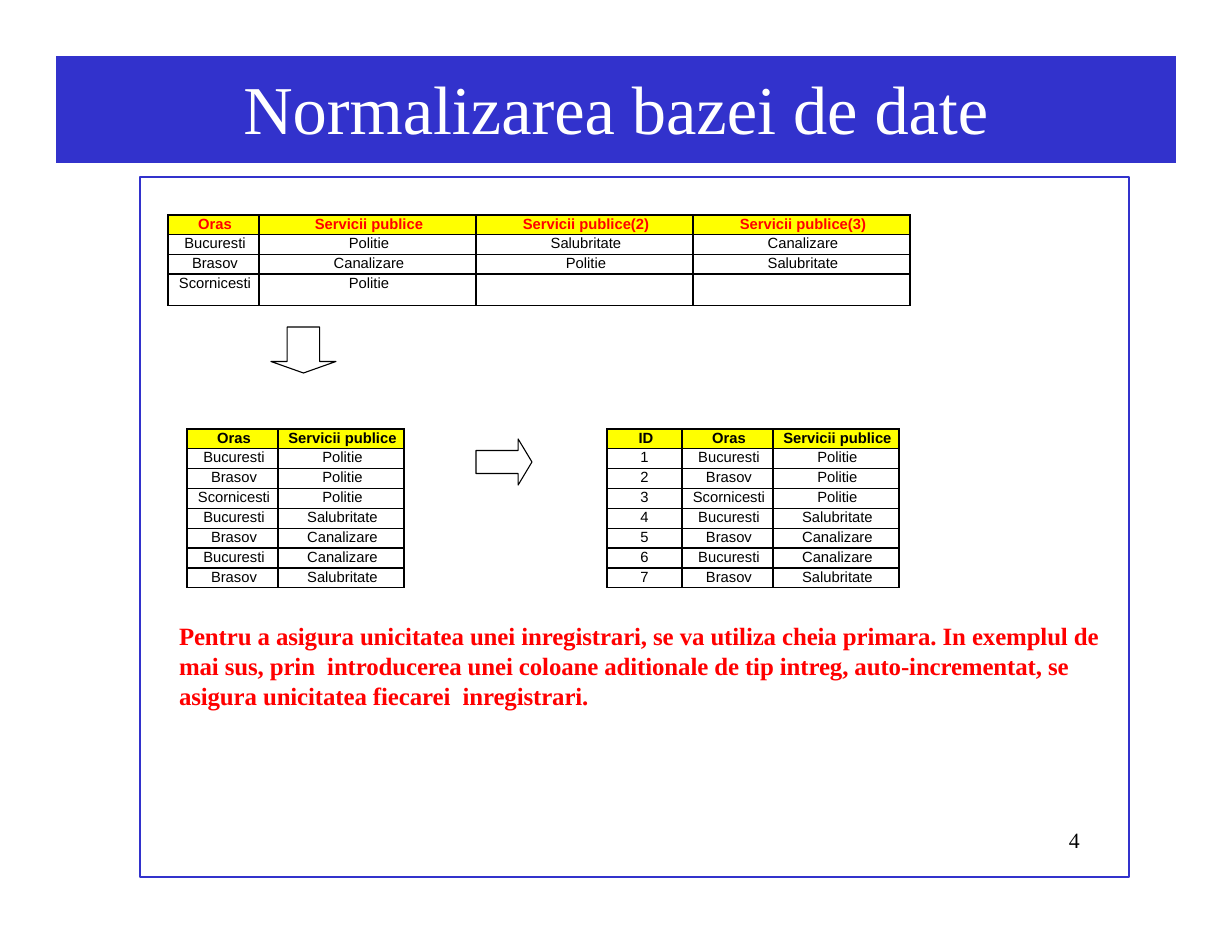
import pptx
import pptx.util
import pptx.dml.color
import pptx.enum.shapes
import pptx.enum.text
import lxml.etree

SCALE = 914400 / 112
SERIF = "Times New Roman"
BLUE, RED, YELLOW, BLACK, WHITE = "3232CC", "FF0000", "FFFF00", "000000", "FFFFFF"
CENTER = pptx.enum.text.PP_ALIGN.CENTER
SHAPE = pptx.enum.shapes.MSO_SHAPE

CITIES = [
    ["Oras", "Servicii publice", "Servicii publice(2)", "Servicii publice(3)"],
    ["Bucuresti", "Politie", "Salubritate", "Canalizare"],
    ["Brasov", "Canalizare", "Politie", "Salubritate"],
    ["Scornicesti", "Politie", "", ""],
]
PAIRS = [
    ["Oras", "Servicii publice"],
    ["Bucuresti", "Politie"],
    ["Brasov", "Politie"],
    ["Scornicesti", "Politie"],
    ["Bucuresti", "Salubritate"],
    ["Brasov", "Canalizare"],
    ["Bucuresti", "Canalizare"],
    ["Brasov", "Salubritate"],
]
NOTE = (
    "Pentru a asigura unicitatea unei inregistrari, se va utiliza cheia primara. "
    "In exemplul de mai sus, prin  introducerea unei coloane aditionale de tip intreg, "
    "auto-incrementat, se asigura unicitatea fiecarei  inregistrari."
)


def px(size):
    """Turn whole pixels into EMU."""
    return pptx.util.Emu(round(size * SCALE))


def color(code):
    """Turn a hex string into a colour."""
    return pptx.dml.color.RGBColor.from_string(code)


def paint(target, code):
    """Fill a shape or cell with a solid colour."""
    target.fill.solid()
    target.fill.fore_color.rgb = color(code)


def style(run, size, code, font=SERIF, bold=False, gap=0):
    """Format one run, with letter spacing in hundredths of a point."""
    run.font.size = pptx.util.Pt(size)
    run.font.name = font
    run.font.bold = bold
    run.font.color.rgb = color(code)
    if gap:
        run.font._element.set("spc", str(gap))


def indent(para, left):
    """Set the left margin of a paragraph."""
    props = para._p.get_or_add_pPr()
    props.set("marL", str(px(left)))
    props.set("indent", "0")


def inset(frame, top):
    """Keep only a top inset and wrap the text."""
    frame.margin_left = frame.margin_right = frame.margin_bottom = 0
    frame.margin_top = px(top)
    frame.word_wrap = True
    frame.auto_size = pptx.enum.text.MSO_AUTO_SIZE.NONE
    frame.vertical_anchor = pptx.enum.text.MSO_ANCHOR.TOP


def add_title(slide, text):
    """Place the title placeholder as a blue band."""
    title = slide.shapes.title
    title.left, title.top, title.width, title.height = map(px, (56, 56, 1120, 107))
    paint(title, BLUE)
    inset(title.text_frame, 10)
    title.text_frame.text = text
    para = title.text_frame.paragraphs[0]
    para.alignment = CENTER
    para.space_before = pptx.util.Pt(6.6)
    style(para.runs[0], 44, WHITE, gap=-5)


def add_shape(slide, kind, box, code, tweaks=()):
    """Add an unfilled outline shape."""
    shape = slide.shapes.add_shape(kind, *map(px, box))
    shape.shadow.inherit = False
    shape.fill.background()
    shape.line.color.rgb = color(code)
    shape.line.width = pptx.util.Pt(0.72)
    for index, value in enumerate(tweaks):
        shape.adjustments[index] = value


def add_text(slide, box, text, size, code, left, top=0, bold=False, gap=0):
    """Add a text box of one paragraph and return the paragraph."""
    frame = slide.shapes.add_textbox(*map(px, box)).text_frame
    inset(frame, top)
    frame.text = text
    para = frame.paragraphs[0]
    indent(para, left)
    style(para.runs[0], size, code, bold=bold, gap=gap)
    return para


def border(cell):
    """Draw thin black lines on all four sides of a cell."""
    space = "{http://schemas.openxmlformats.org/drawingml/2006/main}"
    props = cell._tc.get_or_add_tcPr()
    for side in ("lnL", "lnR", "lnT", "lnB"):
        line = lxml.etree.SubElement(props, space + side, w="12700")
        solid = lxml.etree.SubElement(line, space + "solidFill")
        lxml.etree.SubElement(solid, space + "srgbClr", val=BLACK)


def fill_cell(cell, word, head, ink):
    """Write and format one table cell."""
    cell.margin_left = cell.margin_right = cell.margin_top = cell.margin_bottom = 0
    border(cell)
    if head:
        paint(cell, YELLOW)
    else:
        cell.fill.background()
    para = cell.text_frame.paragraphs[0]
    para.alignment = CENTER
    para.line_spacing = pptx.util.Pt(11.1)
    indent(para, 0 if word.isdigit() else 3)
    run = para.add_run()
    run.text = word
    style(run, 9.5, ink if head else BLACK, "Arial", head)


def add_grid(slide, left, top, height, widths, rows, ink=BLACK):
    """Add a table with a yellow header row."""
    box = map(px, (left, top, sum(widths), height))
    grid = slide.shapes.add_table(len(rows), len(widths), *box).table
    grid.first_row = grid.horz_banding = False
    for column, width in zip(grid.columns, widths):
        column.width = px(width)
    for y, row in enumerate(rows):
        grid.rows[y].height = px(height / len(rows))
        for x, word in enumerate(row):
            fill_cell(grid.cell(y, x), word, y == 0, ink)


def main():
    """Build the slide and save it."""
    deck = pptx.Presentation()
    deck.slide_width, deck.slide_height = px(1232), px(952)
    slide = deck.slides.add_slide(deck.slide_layouts[5])
    add_title(slide, "Normalizarea bazei de date")
    add_shape(slide, SHAPE.RECTANGLE, (140, 177, 989, 700), BLUE)
    add_grid(slide, 168, 215, 79, [91, 217, 217, 217], CITIES, RED)
    add_shape(slide, SHAPE.DOWN_ARROW, (271, 327, 65, 46), BLACK, (0.5, 0.25))
    add_shape(slide, SHAPE.RIGHT_ARROW, (476, 439, 56, 46), BLACK, (0.5, 0.3))
    add_grid(slide, 187, 429, 159, [91, 126], PAIRS)
    keyed = [[str(n) if n else "ID", *pair] for n, pair in enumerate(PAIRS)]
    add_grid(slide, 607, 429, 159, [75, 91, 126], keyed)
    note = add_text(slide, (178, 619, 933, 92), NOTE, 16, RED, 1, 2, True, -5)
    note.space_before = pptx.util.Pt(1.1)
    page = add_text(slide, (1065, 830, 20, 25), "4", 14, BLACK, 4)
    page.line_spacing = pptx.util.Pt(14.4)
    deck.save("out.pptx")


if __name__ == "__main__":
    main()
